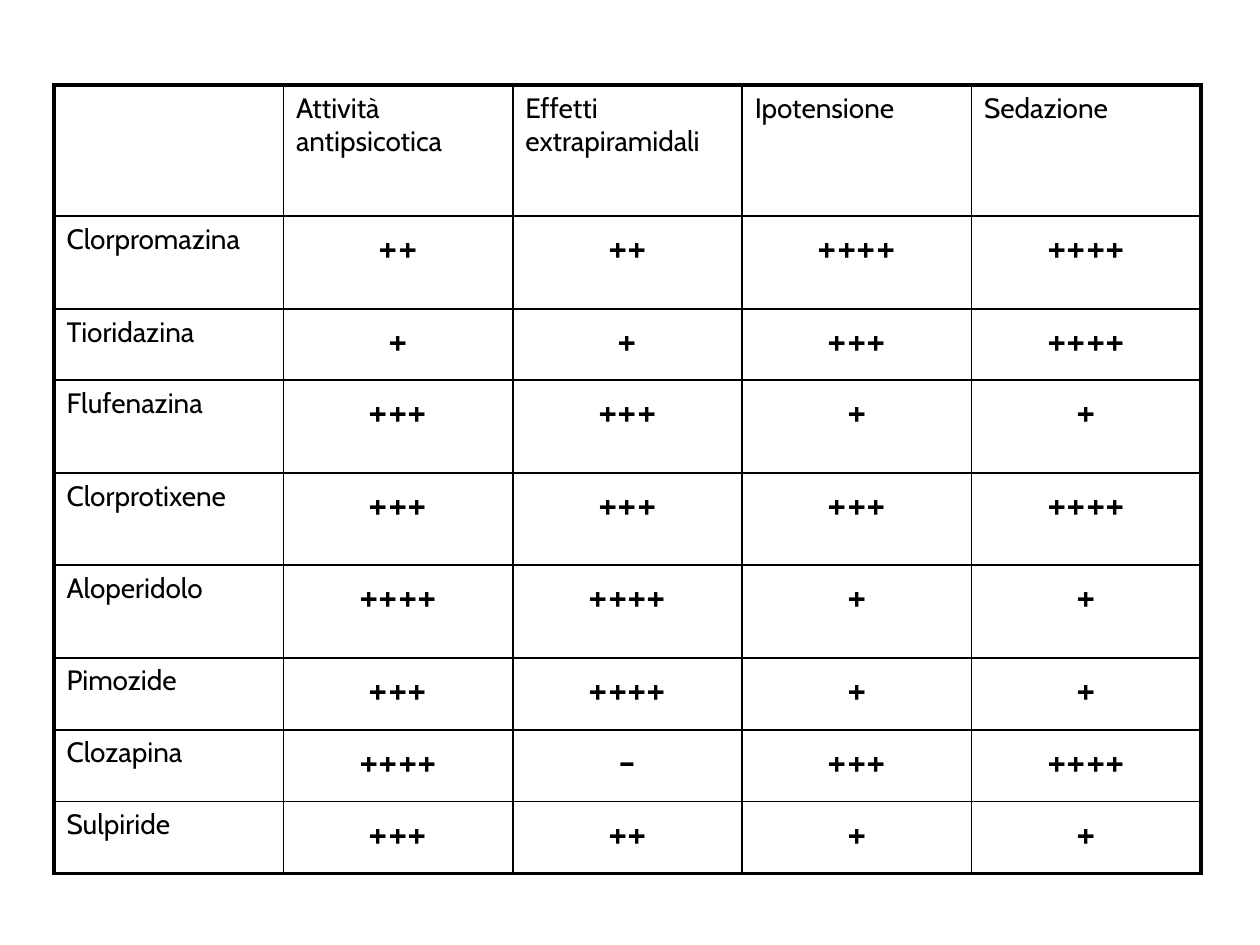
from lxml import etree
from pptx import Presentation
from pptx.dml.color import RGBColor
from pptx.enum.text import PP_ALIGN
from pptx.oxml.ns import qn
from pptx.util import Emu, Pt

LEFT, CENTER = PP_ALIGN.LEFT, PP_ALIGN.CENTER
PX = 914400 // 126
COLORS = {"ink": "000000"}
FONT = "Cabin"
THIN, THICK = 1, 2.25
HEADS = ["", "Attività antipsicotica", "Effetti extrapiramidali", "Ipotensione", "Sedazione"]
DRUGS = [
    ["Clorpromazina", "++", "++", "++++", "++++"],
    ["Tioridazina", "+", "+", "+++", "++++"],
    ["Flufenazina", "+++", "+++", "+", "+"],
    ["Clorprotixene", "+++", "+++", "+++", "++++"],
    ["Aloperidolo", "++++", "++++", "+", "+"],
    ["Pimozide", "+++", "++++", "+", "+"],
    ["Clozapina", "++++", "-", "+++", "++++"],
    ["Sulpiride", "+++", "++", "+", "+"],
]
HEIGHTS = [131, 93, 71, 93, 92, 93, 72, 72, 72]


def px(count):
    """Turn px into EMU."""
    return Emu(round(count * PX))


def write(cell, text, size=16, align=LEFT, color="ink"):
    """Put formatted text in a cell, with a fifth of a line above it."""
    par = cell.text_frame.paragraphs[0]
    par.alignment = align
    par.space_before = Pt(0)
    gap = par._p.pPr.find(qn("a:spcBef"))
    gap.remove(gap[0])
    etree.SubElement(gap, qn("a:spcPct"), val="20000")
    run = par.add_run()
    run.text = text
    run.font.name = FONT
    run.font.size = Pt(size)
    run.font.color.rgb = RGBColor.from_string(COLORS[color])


def edge(cell, widths, color="ink"):
    """Draw the left, right, top and bottom borders of a cell."""
    props = cell._tc.get_or_add_tcPr()
    for side, width in zip("LRTB", widths):
        line = etree.SubElement(props, qn(f"a:ln{side}"), w=str(Pt(width)))
        fill = etree.SubElement(line, qn("a:solidFill"))
        etree.SubElement(fill, qn("a:srgbClr"), val=COLORS[color])


def grid(slide, left, top, width, heights, rows):
    """Build the drug table with a thick outer frame."""
    last, end = len(rows) - 1, len(rows[0]) - 1
    frame = slide.shapes.add_table(
        last + 1, end + 1, px(left), px(top), px(width), px(sum(heights)))
    table = frame.table
    table.first_row = table.horz_banding = False
    for col in table.columns:
        col.width = px(width / (end + 1))
    for r, (row, height) in enumerate(zip(rows, heights)):
        table.rows[r].height = px(height)
        for c, text in enumerate(row):
            cell = table.cell(r, c)
            outer = (c == 0, c == end, r == 0, r == last)
            edge(cell, [THICK if out else THIN for out in outer])
            cell.fill.background()
            if r and c:
                write(cell, text, size=24, align=CENTER)
            elif text:
                write(cell, text)


def main():
    """Make the deck and save it."""
    deck = Presentation()
    deck.slide_width, deck.slide_height = px(1260), px(945)
    slide = deck.slides.add_slide(deck.slide_layouts[6])
    grid(slide, 54, 85, 1147, HEIGHTS, [HEADS] + DRUGS)
    deck.save("out.pptx")


if __name__ == "__main__":
    main()
